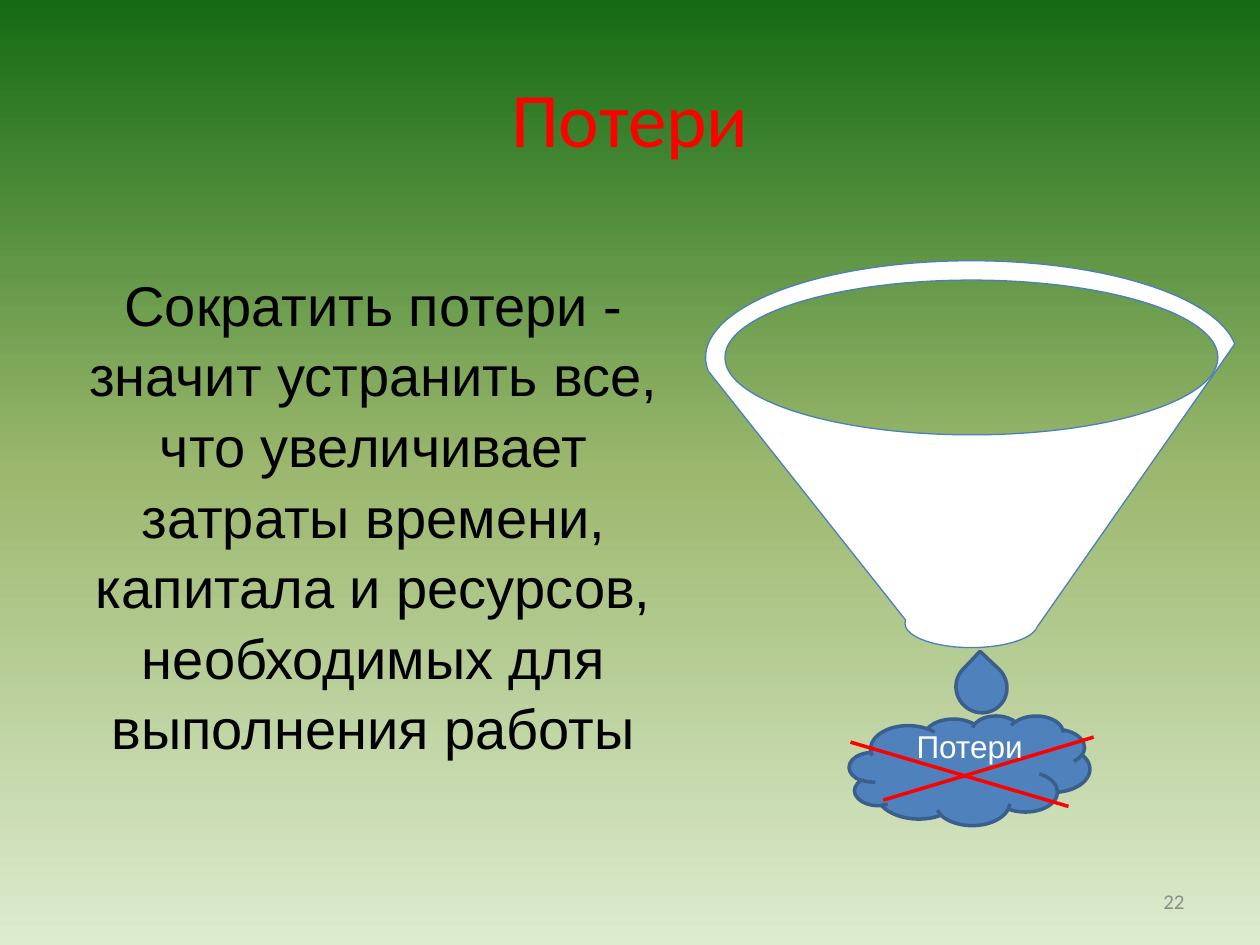
from copy import deepcopy

from lxml.etree import SubElement
from pptx import Presentation
from pptx.dml.color import RGBColor
from pptx.enum.shapes import MSO_CONNECTOR, MSO_SHAPE as SHAPE
from pptx.enum.text import MSO_ANCHOR as ANCHOR, MSO_AUTO_SIZE as AUTO, PP_ALIGN as ALIGN
from pptx.oxml.ns import qn
from pptx.util import Inches, Pt

RED = RGBColor(0xFF, 0, 0)
BLACK = RGBColor(0, 0, 0)
WHITE = RGBColor(0xFF, 0xFF, 0xFF)
GREY = RGBColor(0x8C, 0x8C, 0x8C)
BLUE = RGBColor(0x4F, 0x81, 0xBD)
DARK_BLUE = RGBColor(0x3A, 0x5F, 0x8C)
FUNNEL_LINE = RGBColor(0x4B, 0x7E, 0xBC)
GRADIENT = [(0, RGBColor(0xDD, 0xEB, 0xCF)),
            (0.5, RGBColor(0x9C, 0xB8, 0x6E)),
            (1, RGBColor(0x15, 0x6B, 0x13))]

# Content
TITLE = "Потери"
BODY = ("Сократить потери - значит устранить все, что увеличивает затраты "
        "времени, капитала и ресурсов, необходимых для выполнения работы")
LOSS_LABEL = "Потери"
PAGE = "22"

# Places: left, top, width, height
TITLE_BOX = (0.5, 0.3, 9, 1.25)
BODY_BOX = (0.32, 2.07, 5.29, 2.24)
PAGE_BOX = (7.17, 6.95, 2.33, 0.4)
LABEL_BOX = (7.17, 5.72, 1.05, 0.4)
CLOUD = (6.74, 5.68, 1.91, 0.87)
DROP = (7.59, 5.25, 0.4, 0.41)
FUNNEL = (5.6, 2.07, 4.22, 3.07)
CROSS = [(8.68, 5.85, 7.01, 6.35), (6.75, 5.89, 8.48, 6.4)]


def inches(values):
    return [Inches(v) for v in values]


def write(sp, text, size, font, color, align, anchor=ANCHOR.TOP, wrap=True):
    tf = sp.text_frame
    tf.text = text
    tf.word_wrap = wrap
    tf.auto_size = AUTO.NONE if wrap else AUTO.SHAPE_TO_FIT_TEXT
    tf.vertical_anchor = anchor
    p = tf.paragraphs[0]
    p.alignment = align
    f = p.runs[0].font
    f.size, f.name, f.color.rgb = Pt(size), font, color
    return p


def place(sp, box):
    sp.left, sp.top, sp.width, sp.height = inches(box)
    return sp


def add_figure(kind, box, fill, line, width):
    sp = s.shapes.add_shape(kind, *inches(box))
    sp.shadow.inherit = False
    sp.fill.solid()
    sp.fill.fore_color.rgb = fill
    sp.line.color.rgb = line
    sp.line.width = Pt(width)
    return sp


prs = Presentation()
prs.slide_width, prs.slide_height = Inches(10), Inches(7.5)
s = prs.slides.add_slide(prs.slide_layouts[1])

# Background gradient, light at the bottom
fill = s.background.fill
fill.gradient()
fill.gradient_angle = 90
stop_list = s.element.find(".//" + qn("a:gsLst"))
stop_list.insert(1, deepcopy(stop_list[0]))
for stop, (position, color) in zip(fill.gradient_stops, GRADIENT):
    stop.position = position
    stop.color.rgb = color

# Title and body
write(place(s.shapes.title, TITLE_BOX), TITLE, 44, "Calibri", RED,
      ALIGN.CENTER, ANCHOR.MIDDLE)
p = write(place(s.placeholders[1], BODY_BOX), BODY, 32, "Arial", BLACK, ALIGN.CENTER)
p.line_spacing = 1.05
pPr = p._p.get_or_add_pPr()
pPr.set("marL", "0")
pPr.set("indent", "0")
SubElement(pPr, qn("a:buNone"))

# Page number
write(s.shapes.add_textbox(*inches(PAGE_BOX)), PAGE, 12, "Calibri", GREY,
      ALIGN.RIGHT, ANCHOR.MIDDLE)

# Crossed-out cloud of losses
add_figure(SHAPE.CLOUD, CLOUD, BLUE, DARK_BLUE, 2)
for ends in CROSS:
    line = s.shapes.add_connector(MSO_CONNECTOR.STRAIGHT, *inches(ends))
    line.line.color.rgb = RED
    line.line.width = Pt(2)
    SubElement(line._element.spPr, qn("a:effectLst"))

# Drop, label and funnel
add_figure(SHAPE.TEAR, DROP, BLUE, DARK_BLUE, 2).rotation = 313.3
write(s.shapes.add_textbox(*inches(LABEL_BOX)), LOSS_LABEL, 18, "Arial", WHITE,
      ALIGN.CENTER, wrap=False)
add_figure(SHAPE.FUNNEL, FUNNEL, WHITE, FUNNEL_LINE, 0.75)

prs.save("out.pptx")
